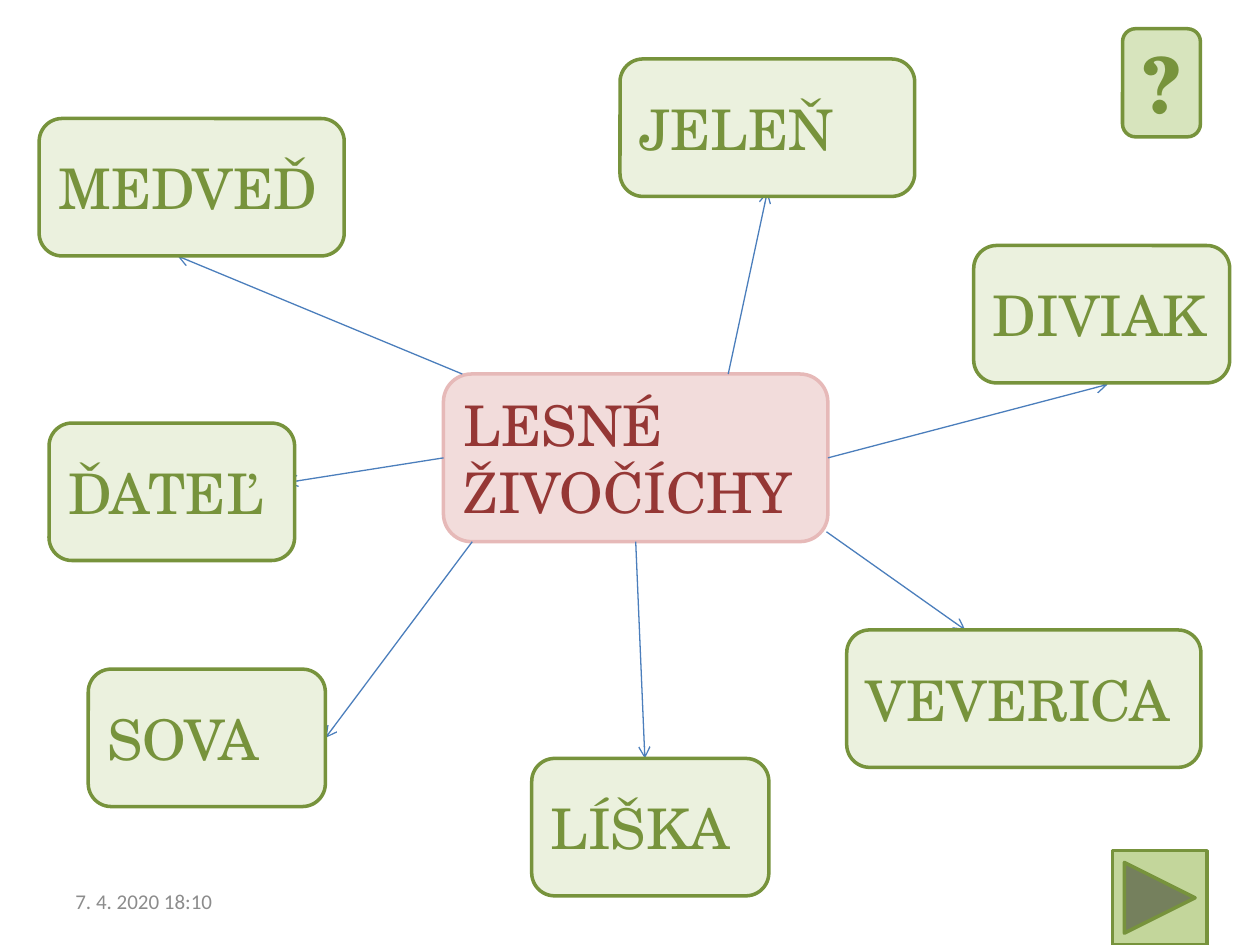
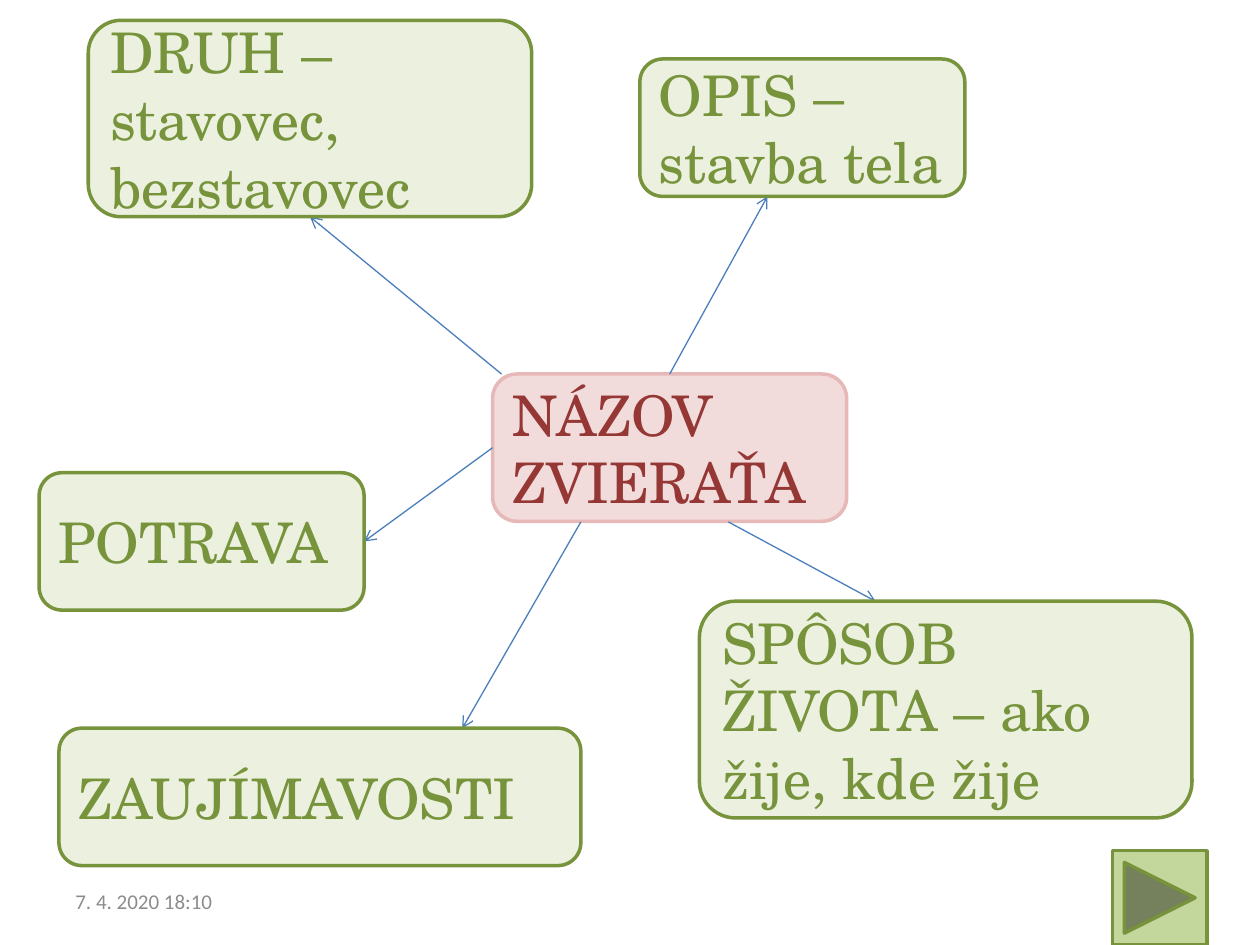
import pptx
import pptx.dml.color
import pptx.enum.shapes
import pptx.enum.text
import pptx.oxml
import pptx.oxml.ns
import pptx.util
from pptx.util import Cm

SHAPE = pptx.enum.shapes.MSO_SHAPE
ALIGN = pptx.enum.text.PP_ALIGN
MIDDLE = pptx.enum.text.MSO_ANCHOR.MIDDLE

SERIF, SANS = "TeX Gyre Schola", "Calibri"
GREEN, PALE_GREEN, LIGHT_GREEN, BUTTON_GREEN = "77933C", "EBF1DE", "D7E4BD", "C3D69B"
RED, PALE_RED, PINK = "953735", "F2DCDB", "E6B9B8"
BLUE, GREY = "4B7EBC", "8C8C8C"
BOX_HEIGHT = 2.77
TOP, LEFT, BOTTOM, RIGHT = range(4)

# Each topic: text, box (left, top, width, height), arrow start, arrow end.
# Arrow ends are either a side to join or an (x, y) point, all in cm.
ANIMALS = [
    ("MEDVEĎ", (0.79, 2.39, 6.15, BOX_HEIGHT), (9.32, 7.54), (3.58, 5.16)),
    ("JELEŇ", (12.5, 1.19, 5.94, BOX_HEIGHT), (14.68, 7.54), (15.47, 3.86)),
    ("DIVIAK", (19.63, 4.95, 5.16, BOX_HEIGHT), RIGHT, (22.33, 7.75)),
    ("VEVERICA", (17.07, 12.7, 7.14, BOX_HEIGHT), (16.66, 10.72), (19.46, 12.7)),
    ("SOVA", (1.78, 13.49, 4.78, BOX_HEIGHT), (9.52, 10.92), RIGHT),
    ("LÍŠKA", (10.72, 15.29, 4.78, BOX_HEIGHT), BOTTOM, (13, 15.29)),
    ("ĎATEĽ", (0.99, 8.53, 4.95, BOX_HEIGHT), LEFT, (5.77, 9.73)),
]
QUESTIONS = [
    ("DRUH – stavovec, bezstavovec", (1.78, 0.41, 8.94, 3.96), (10.11, 7.54), BOTTOM),
    ("OPIS – stavba tela", (12.9, 1.19, 6.55, BOX_HEIGHT), TOP, (15.47, 3.96)),
    ("SPÔSOB ŽIVOTA – ako žije, kde žije", (14.1, 12.12, 9.93, 4.37),
     (14.68, 10.52), (17.65, 12.12)),
    ("POTRAVA", (0.79, 9.53, 6.55, BOX_HEIGHT), LEFT, RIGHT),
    ("ZAUJÍMAVOSTI", (1.19, 14.68, 10.52, BOX_HEIGHT), (11.71, 10.52), (9.32, 14.68)),
]


def rgb(value):
    return pptx.dml.color.RGBColor.from_string(value)


def write(sp, text, size, color, font=SERIF, bold=False, align=ALIGN.LEFT):
    tf = sp.text_frame
    tf.word_wrap = True
    tf.vertical_anchor = MIDDLE
    p = tf.paragraphs[0]
    p.text = text
    p.alignment = align
    p.font.name = font
    p.font.size = pptx.util.Pt(size)
    p.font.bold = bold
    p.font.color.rgb = rgb(color)


def add_box(slide, box, fill, line, kind=SHAPE.ROUNDED_RECTANGLE):
    sp = slide.shapes.add_shape(kind, *map(Cm, box))
    sp.shadow.inherit = False
    sp.fill.solid()
    sp.fill.fore_color.rgb = rgb(fill)
    sp.line.color.rgb = rgb(line)
    sp.line.width = pptx.util.Pt(2)
    return sp


def add_arrow(slide, center, topic, start, end):
    """Draw an arrow from center to topic, lying behind the topic's box."""
    points = [(0, 0) if isinstance(e, int) else e for e in (start, end)]
    line = slide.shapes.add_connector(
        pptx.enum.shapes.MSO_CONNECTOR.STRAIGHT, *(Cm(v) for xy in points for v in xy))
    if isinstance(start, int):
        line.begin_connect(center, start)
    if isinstance(end, int):
        line.end_connect(topic, end)
    line.line.color.rgb = rgb(BLUE)
    line.line.width = pptx.util.Pt(0.75)
    props = line._element.spPr
    pptx.oxml.ns.qn("a:ln")
    ln = props.find(pptx.oxml.ns.qn("a:ln"))
    ns = pptx.oxml.ns.nsdecls("a")
    ln.append(pptx.oxml.parse_xml(f'<a:tailEnd {ns} type="arrow"/>'))
    props.append(pptx.oxml.parse_xml(f"<a:effectLst {ns}/>"))
    topic._element.addprevious(line._element)


def add_mind_map(prs, title, center_box, topics):
    slide = prs.slides.add_slide(prs.slide_layouts[6])
    center = add_box(slide, center_box, PALE_RED, PINK)
    write(center, title, 32, RED)
    for text, box, start, end in topics:
        topic = add_box(slide, box, PALE_GREEN, GREEN)
        write(topic, text, 32, GREEN)
        add_arrow(slide, center, topic, start, end)
    add_box(slide, (22.43, 17.15, 1.9, 1.9), BUTTON_GREEN, GREEN,
            SHAPE.ACTION_BUTTON_FORWARD_OR_NEXT)
    date = slide.shapes.add_textbox(Cm(1.27), Cm(17.65), Cm(5.92), Cm(1.02))
    write(date, "7. 4. 2020 18:10", 12, GREY, SANS)
    return slide


def main():
    prs = pptx.Presentation()
    prs.slide_width, prs.slide_height = Cm(25.4), Cm(19.05)
    slide = add_mind_map(prs, "LESNÉ ŽIVOČÍCHY", (8.94, 7.54, 7.75, 3.38), ANIMALS)
    help_box = add_box(slide, (22.63, 0.58, 1.57, 2.18), LIGHT_GREEN, GREEN)
    write(help_box, "?", 44, GREEN, bold=True, align=ALIGN.CENTER)
    add_mind_map(prs, "NÁZOV ZVIERAŤA", (9.93, 7.54, 7.14, 2.97), QUESTIONS)
    prs.save("out.pptx")


if __name__ == "__main__":
    main()
